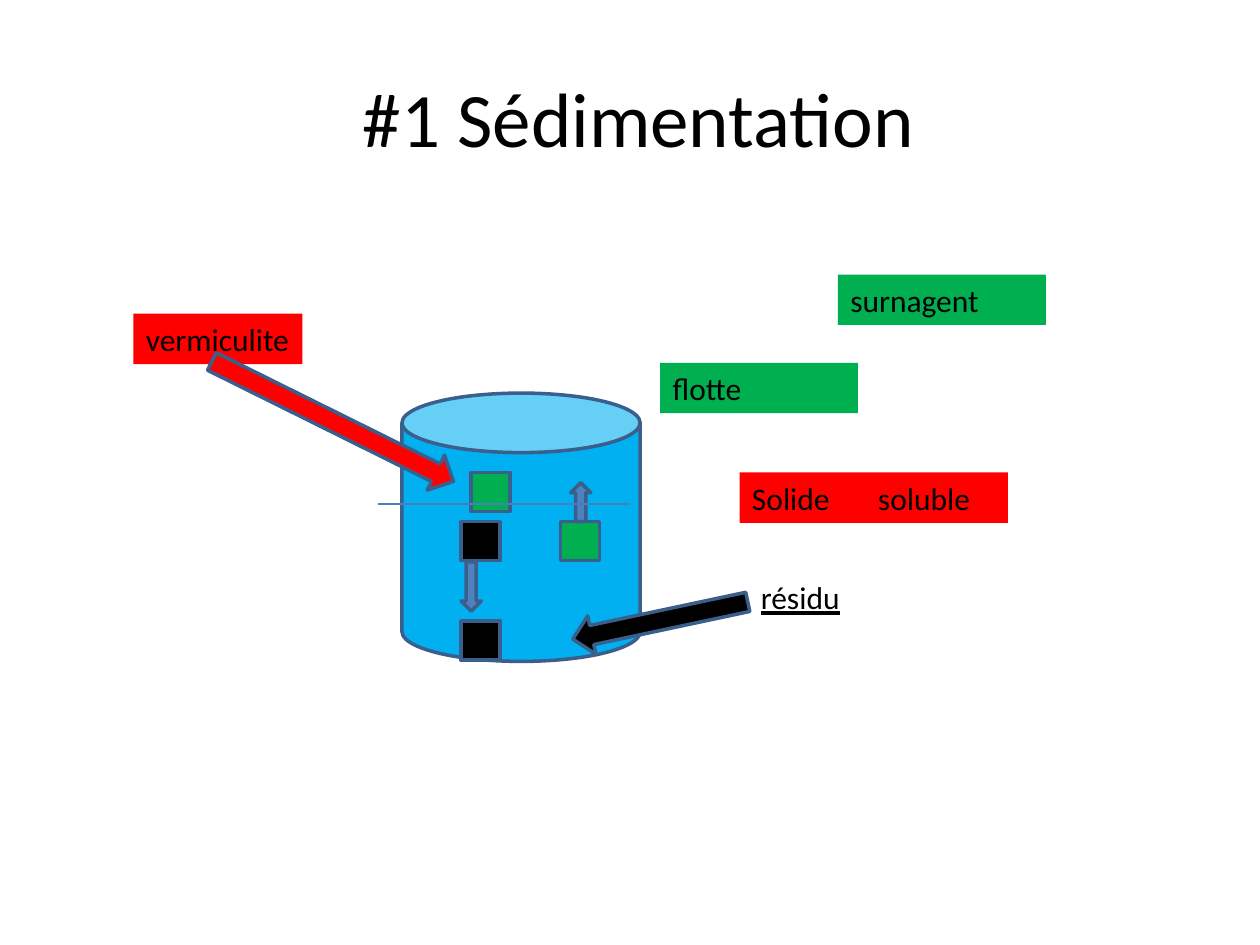
from pptx import Presentation
from pptx.dml.color import RGBColor
from pptx.enum.shapes import MSO_SHAPE
from pptx.enum.text import MSO_ANCHOR, MSO_AUTO_SIZE, PP_ALIGN
from pptx.util import Inches, Pt

CAN, RECT = MSO_SHAPE.CAN, MSO_SHAPE.RECTANGLE
UP, DOWN = MSO_SHAPE.UP_ARROW, MSO_SHAPE.DOWN_ARROW
LEFT, RIGHT = MSO_SHAPE.LEFT_ARROW, MSO_SHAPE.RIGHT_ARROW

HUES = {"water": "00B0F0", "black": "000000", "green": "00B050", "red": "FF0000",
        "blue": "4F81BD", "edge": "3A5F8C", "wave": "4B7EBC"}
HUES = {name: RGBColor.from_string(code) for name, code in HUES.items()}
SIDE = 0.31

prs = Presentation()
prs.slide_width, prs.slide_height = Inches(10), Inches(7.5)
slide = prs.slides.add_slide(prs.slide_layouts[5])
shapes = slide.shapes


def add_part(kind, x, y, w, h, hue, turn=0):
    part = shapes.add_shape(kind, Inches(x), Inches(y), Inches(w), Inches(h))
    part.shadow.inherit = False
    part.fill.solid()
    part.fill.fore_color.rgb = HUES[hue]
    part.line.color.rgb = HUES["edge"]
    part.line.width = Pt(2)
    part.rotation = turn


def add_label(text, x, y, w, hue=None):
    box = shapes.add_textbox(Inches(x), Inches(y), Inches(w), Inches(0.4))
    if hue:
        box.fill.solid()
        box.fill.fore_color.rgb = HUES[hue]
    frame = box.text_frame
    frame.word_wrap = True
    frame.auto_size = MSO_AUTO_SIZE.SHAPE_TO_FIT_TEXT
    para = frame.paragraphs[0]
    para.text = text
    font = para.font
    font.name, font.size = "Calibri", Pt(18)
    font.color.rgb = HUES["black"]
    if not hue:
        font.underline = True


# Title
title = shapes.title
title.left, title.top = Inches(0.5), Inches(0.3)
title.width, title.height = Inches(9), Inches(1.25)
title.text_frame.vertical_anchor = MSO_ANCHOR.MIDDLE
para = title.text_frame.paragraphs[0]
para.text = " #1 Sédimentation"
para.alignment = PP_ALIGN.CENTER
para.font.name, para.font.size = "Calibri", Pt(44)
para.font.color.rgb = HUES["black"]

# Tank with sinking and floating pieces
add_part(CAN, 3.19, 3.12, 1.89, 2.13, "water")
for x, y, hue in [(3.66, 4.14, "black"), (4.45, 4.14, "green"),
                  (3.74, 3.75, "green")]:
    add_part(RECT, x, y, SIDE, SIDE, hue)
add_part(UP, 4.53, 3.83, 0.16, 0.31, "blue")
add_part(DOWN, 3.66, 4.46, 0.16, 0.39, "blue")
add_part(RECT, 3.66, 4.93, SIDE, SIDE, "black")

# Labels and their arrows
add_label("vermiculite", 1.06, 2.49, 1.34, "red")
add_part(RIGHT, 1.57, 3.19, 2.14, 0.31, "red", 26.4)
add_label("résidu", 5.94, 4.54, 1.34)
add_part(LEFT, 4.53, 4.77, 1.42, 0.31, "black", 348)
add_label("Solide\tsoluble", 5.87, 3.75, 2.13, "red")
add_label("flotte", 5.24, 2.88, 1.57, "green")
add_label("surnagent", 6.65, 2.18, 1.65, "green")

# Water surface
crest = [(3.19, 3.72), (3.27, 3.75), (3.3, 3.76), (3.48, 3.76), (3.57, 3.72),
         (3.61, 3.69), (3.81, 3.69), (3.92, 3.72), (4.02, 3.76), (4.12, 3.75),
         (4.13, 3.71), (4.25, 3.66), (4.3, 3.67), (4.41, 3.69), (4.48, 3.71),
         (4.51, 3.78), (4.6, 3.77), (4.64, 3.76), (4.71, 3.7), (4.72, 3.66),
         (4.76, 3.65), (4.88, 3.67), (4.95, 3.72), (4.98, 3.76), (5.01, 3.78),
         (5.08, 3.78)]
pen = shapes.build_freeform(*crest[0], scale=Inches(1))
pen.add_line_segments(crest[1:], close=False)
wave = pen.convert_to_shape()
wave.shadow.inherit = False
wave.fill.background()
wave.line.color.rgb = HUES["wave"]
wave.line.width = Pt(0.75)

prs.save("out.pptx")
